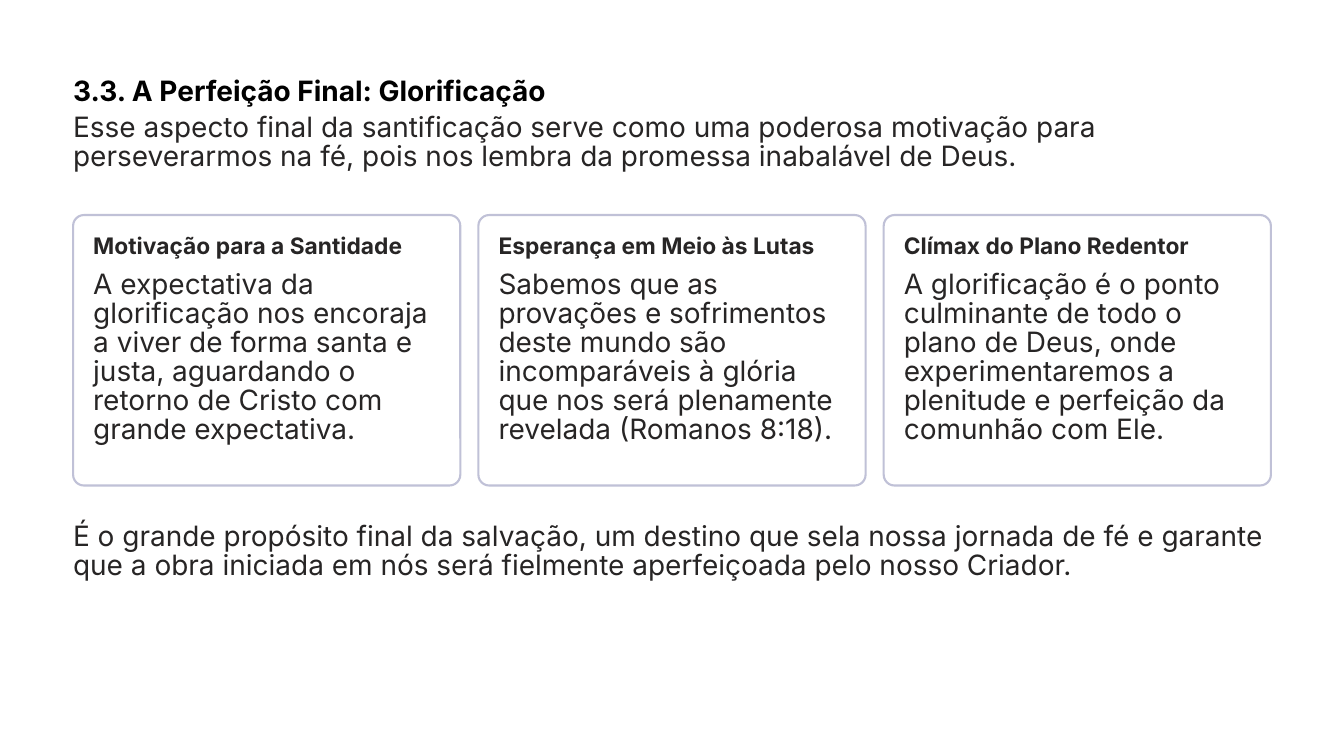
from dataclasses import dataclass

from pptx import Presentation
from pptx.dml.color import RGBColor
from pptx.enum.shapes import MSO_SHAPE
from pptx.enum.text import MSO_ANCHOR, MSO_AUTO_SIZE, PP_ALIGN
from pptx.util import Inches, Pt


@dataclass(frozen=True)
class Theme:
    font: str = "Inter"
    background: str = "FFFFFF"
    title_color: str = "000000"
    text_color: str = "272525"
    border_color: str = "C0C1D7"
    border_width: float = 1.8
    title_size: float = 24
    heading_size: float = 19.5
    body_size: float = 24
    title_spacing: float = 29
    heading_spacing: float = 24
    body_spacing: float = 25


class SlideBuilder:
    def __init__(self, slide, theme):
        self.slide = slide
        self.theme = theme
        fill = slide.background.fill
        fill.solid()
        fill.fore_color.rgb = RGBColor.from_string(theme.background)

    def set_text(self, shape, text, size, spacing, color, bold=False):
        frame = shape.text_frame
        frame.word_wrap = True
        frame.auto_size = MSO_AUTO_SIZE.NONE
        frame.vertical_anchor = MSO_ANCHOR.TOP
        frame.margin_left = frame.margin_right = 0
        frame.margin_top = frame.margin_bottom = 0
        paragraph = frame.paragraphs[0]
        paragraph.alignment = PP_ALIGN.LEFT
        paragraph.line_spacing = Pt(spacing)
        paragraph.space_before = Pt(0)
        run = paragraph.add_run()
        run.text = text
        run.font.name = self.theme.font
        run.font.size = Pt(size)
        run.font.bold = bold
        run.font.color.rgb = RGBColor.from_string(color)

    def title(self, text, left, top, width, height):
        shape = self.slide.shapes.title
        shape.left, shape.top = Inches(left), Inches(top)
        shape.width, shape.height = Inches(width), Inches(height)
        theme = self.theme
        self.set_text(shape, text, theme.title_size, theme.title_spacing,
                      theme.title_color, bold=True)

    def text_box(self, left, top, width, height):
        return self.slide.shapes.add_textbox(
            Inches(left), Inches(top), Inches(width), Inches(height))

    def heading(self, text, left, top, width, height):
        theme = self.theme
        self.set_text(self.text_box(left, top, width, height), text,
                      theme.heading_size, theme.heading_spacing,
                      theme.text_color, bold=True)

    def body(self, text, left, top, width, height):
        theme = self.theme
        self.set_text(self.text_box(left, top, width, height), text,
                      theme.body_size, theme.body_spacing, theme.text_color)

    def card(self, heading, text, left, top, width, height):
        shape = self.slide.shapes.add_shape(
            MSO_SHAPE.ROUNDED_RECTANGLE,
            Inches(left), Inches(top), Inches(width), Inches(height))
        shape.adjustments[0] = 0.04
        shape.shadow.inherit = False
        shape.fill.solid()
        shape.fill.fore_color.rgb = RGBColor.from_string(self.theme.background)
        shape.line.color.rgb = RGBColor.from_string(self.theme.border_color)
        shape.line.width = Pt(self.theme.border_width)
        padding = 0.24
        inner_width = width - 2 * padding
        self.heading(heading, left + padding, top + 0.19, inner_width, 0.34)
        self.body(text, left + padding, top + 0.66, inner_width, 2.3)


CARDS = [
    ("Motivação para a Santidade",
     "A expectativa da glorificação nos encoraja a viver de forma santa e "
     "justa, aguardando o retorno de Cristo com grande expectativa."),
    ("Esperança em Meio às Lutas",
     "Sabemos que as provações e sofrimentos deste mundo são incomparáveis "
     "à glória que nos será plenamente revelada (Romanos 8:18)."),
    ("Clímax do Plano Redentor",
     "A glorificação é o ponto culminante de todo o plano de Deus, onde "
     "experimentaremos a plenitude e perfeição da comunhão com Ele."),
]


def main():
    presentation = Presentation()
    presentation.slide_width = Inches(16)
    presentation.slide_height = Inches(9)
    slide = presentation.slides.add_slide(presentation.slide_layouts[5])
    builder = SlideBuilder(slide, Theme())
    margin = 0.87
    content_width = 16 - 2 * margin

    # Title and introduction
    builder.title("3.3. A Perfeição Final: Glorificação", margin, 0.87, 7.25, 0.41)
    builder.body(
        "Esse aspecto final da santificação serve como uma poderosa motivação "
        "para perseverarmos na fé, pois nos lembra da promessa inabalável de Deus.",
        margin, 1.36, content_width, 0.69)

    # Three equal cards across the content width
    card_width = 4.61
    step = (content_width - card_width) / (len(CARDS) - 1)
    for index, (heading, text) in enumerate(CARDS):
        builder.card(heading, text, margin + index * step, 2.56, card_width, 3.22)

    # Conclusion
    builder.body(
        "É o grande propósito final da salvação, um destino que sela nossa "
        "jornada de fé e garante que a obra iniciada em nós será fielmente "
        "aperfeiçoada pelo nosso Criador.",
        margin, 6.22, content_width, 0.69)

    presentation.save("out.pptx")


if __name__ == "__main__":
    main()
